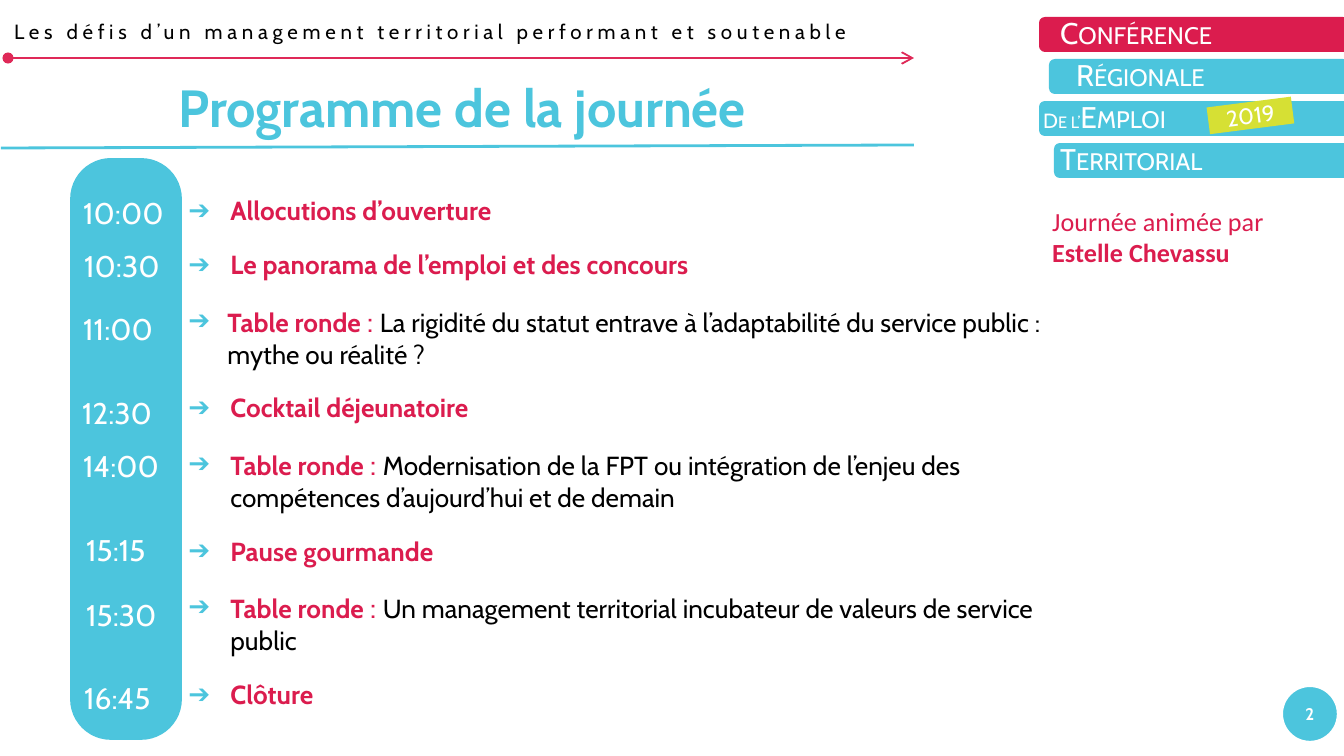
from lxml.etree import SubElement
from pptx import Presentation
from pptx.dml.color import RGBColor
from pptx.enum.shapes import MSO_CONNECTOR, MSO_SHAPE
from pptx.enum.text import MSO_ANCHOR, MSO_AUTO_SIZE, PP_ALIGN
from pptx.oxml.ns import qn
from pptx.util import Pt

PX = 914400 / 134.4
CYAN, PINK, LIME, WHITE, BLACK = "4CC5DD", "DB1C4E", "D6E034", "FFFFFF", "000000"


def box(shapes, at, kind=None, fill=None, line=None, line_width=1):
    """Add a preset shape, or a text box when no kind is given."""
    at = [round(v * PX) for v in at]
    if kind is None:
        area = shapes.add_textbox(*at)
    else:
        area = shapes.add_shape(kind, *at)
        area.shadow.inherit = False
        area.fill.solid()
        area.fill.fore_color.rgb = RGBColor.from_string(fill)
        if line:
            area.line.color.rgb = RGBColor.from_string(line)
            area.line.width = Pt(line_width)
        else:
            area.line.fill.background()
    area.text_frame.word_wrap = True
    return area


def write(paragraph, text, size, color, bold=False, font="Cabin", **extra):
    """Add a run; extra holds run properties such as cap and spc."""
    run = paragraph.add_run()
    run.text = text
    for key, value in {"size": Pt(size), "bold": bold, "name": font}.items():
        setattr(run.font, key, value)
    run.font.color.rgb = RGBColor.from_string(color)
    for key, value in extra.items():
        run.font._element.set(key, value)


prs = Presentation()
prs.slide_width, prs.slide_height = round(1344 * PX), round(756 * PX)
slide = prs.slides.add_slide(prs.slide_layouts[1])
shapes = slide.shapes
title, programme = slide.placeholders

# Title and programme placeholders
for holder, at in ((title, (165, 69, 996, 77)), (programme, (175, 188, 937, 534))):
    holder.left, holder.top, holder.width, holder.height = [round(v * PX) for v in at]
    frame = holder.text_frame
    for key, value in {"word_wrap": True, "auto_size": MSO_AUTO_SIZE.NONE,
                       "vertical_anchor": MSO_ANCHOR.TOP}.items():
        setattr(frame, key, value)
heading = title.text_frame.paragraphs[0]
heading.alignment = PP_ALIGN.LEFT
write(heading, "Programme de la journée", 28, CYAN, True)

# Programme: heading, then the subject of a round table
sessions = [
    ("Allocutions d’ouverture", ""),
    ("Le panorama de l’emploi et des concours", ""),
    ("Table ronde ", "La rigidité du statut entrave à l’adaptabilité du service public : mythe ou réalité ?"),
    ("Cocktail déjeunatoire", ""),
    ("Table ronde ", "Modernisation de la FPT ou intégration de l’enjeu des compétences d’aujourd’hui et de demain"),
    ("Pause gourmande", ""),
    ("Table ronde ", "Un management territorial incubateur de valeurs de service public"),
    ("Clôture", ""),
]
for number, (session, subject) in enumerate(sessions):
    frame = programme.text_frame
    item = frame.add_paragraph() if number else frame.paragraphs[0]
    item.space_before, item.space_after = Pt(0), Pt(12)
    props = item._p.get_or_add_pPr()
    indent = round((39 if number == 2 else 42) * PX)
    props.set("marL", str(indent))
    props.set("indent", str(-indent))
    bullet_color = SubElement(props, qn("a:buClr"))
    SubElement(bullet_color, qn("a:srgbClr")).set("val", CYAN)
    SubElement(props, qn("a:buChar")).set("char", "➔")
    write(item, session, 14, PINK, True)
    if subject:
        write(item, ": ", 16, PINK)
        write(item, subject, 14, BLACK)

# Theme of the day
theme = box(shapes, (1, 12, 968, 39))
write(theme.text_frame.paragraphs[0],
      "Les défis d’un management territorial performant et soutenable", 11, BLACK, spc="250")

# Theme arrow and title rule
rules = [((8, 58, 914, 58), "DF2958", 1, {"headEnd": "oval", "tailEnd": "arrow"}),
         ((1, 148, 914, 145), CYAN, 1.5, {})]
for ends, color, width, tips in rules:
    rule = shapes.add_connector(MSO_CONNECTOR.STRAIGHT, *[round(v * PX) for v in ends])
    rule.line.color.rgb = RGBColor.from_string(color)
    rule.line.width = Pt(width)
    for tip, tip_type in tips.items():
        SubElement(rule.line._get_or_add_ln(), qn(f"a:{tip}")).set("type", tip_type)
    SubElement(rule._element.spPr, qn("a:effectLst"))

# Column of times
column = box(shapes, (72, 160, 108, 578), MSO_SHAPE.ROUNDED_RECTANGLE, CYAN, CYAN, 2)
column.adjustments[0] = 0.36
times = [("10:00", 70, 188), ("10:30", 71, 241), ("11:00", 70, 304), ("12:30", 69, 388),
         ("14:00", 70, 441), ("15:15", 73, 525), ("15:30", 73, 590), ("16:45", 71, 673)]
for time, left, top in times:
    label = box(shapes, (left, top, 125, 54))
    write(label.text_frame.paragraphs[0], time, 16, WHITE)

# Conference banner: bar left, text left, small prefix, word, bar colour
banner = [(1039, 1047, "", "Conférence", PINK), (1049, 1063, "", "Régionale", CYAN),
          (1039, 1030, "De l’", "Emploi", CYAN), (1054, 1047, "", "Territorial", CYAN)]
for row, (bar_left, text_left, prefix, word, color) in enumerate(banner):
    top = 17 + 42 * row
    box(shapes, (bar_left, top, 1349 - bar_left, 35), MSO_SHAPE.ROUNDED_RECTANGLE, color)
    label = box(shapes, (text_left, top - 9, 260, 50)).text_frame.paragraphs[0]
    if prefix:
        write(label, prefix, 11, WHITE, cap="small")
    write(label, word, 16, WHITE, cap="small")

# Year tag
year = box(shapes, (1208, 102, 85, 27), MSO_SHAPE.RECTANGLE, LIME)
year.rotation = -7.3
write(year.text_frame.paragraphs[0], "2019", 12, WHITE)

# Host of the day, on translucent white
host = box(shapes, (1039, 188, 281, 97), MSO_SHAPE.RECTANGLE, WHITE)
fill_color = host._element.spPr.find(qn("a:solidFill"))[0]
SubElement(fill_color, qn("a:alpha")).set("val", "60000")
credit = host.text_frame.paragraphs[0]
credit.alignment = PP_ALIGN.LEFT
write(credit, "Journée animée par ", 14, "DB1D4E", font="Calibri")
write(credit, "Estelle Chevassu", 14, "DB1D4E", True, "Calibri")

# Page number
page = box(shapes, (1281, 685, 58, 58), MSO_SHAPE.OVAL, CYAN, WHITE, 2.25)
for side in ("left", "top", "right", "bottom"):
    setattr(page.text_frame, f"margin_{side}", 0)
write(page.text_frame.paragraphs[0], "2", 9, WHITE, True)

prs.save("out.pptx")
